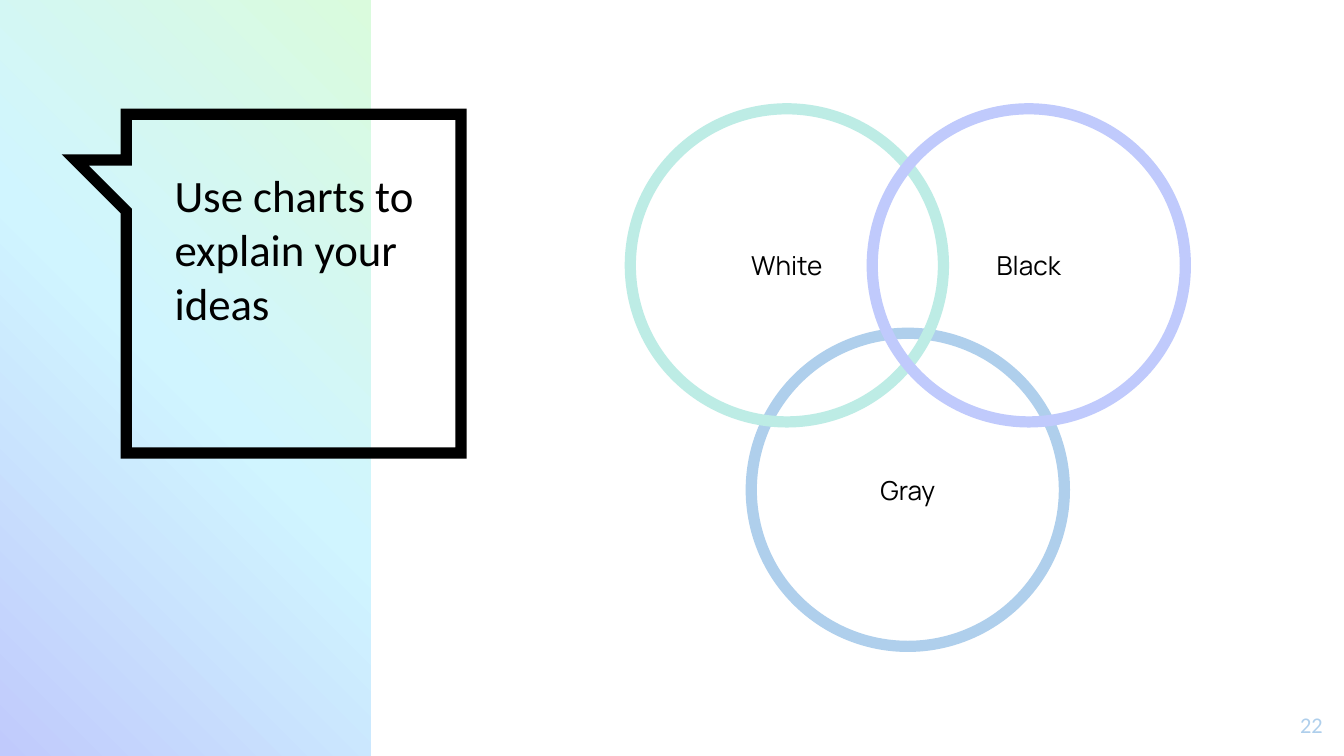
"""Build a slide with a speech-bubble title and three overlapping circles."""
import copy

import pptx
import pptx.dml.color
import pptx.enum.shapes
import pptx.enum.text
import pptx.oxml
import pptx.oxml.ns
import pptx.util

Inches = pptx.util.Inches
Pt = pptx.util.Pt
RGBColor = pptx.dml.color.RGBColor
Shapes = pptx.enum.shapes.MSO_SHAPE
Align = pptx.enum.text.PP_ALIGN
Anchor = pptx.enum.text.MSO_ANCHOR

BLACK = RGBColor(0x00, 0x00, 0x00)
WHITE = RGBColor(0xFF, 0xFF, 0xFF)
LAVENDER = RGBColor(0xC0, 0xCA, 0xFC)
SKY = RGBColor(0xD0, 0xF5, 0xFF)
LIME = RGBColor(0xDA, 0xFB, 0xDD)
BLUE = RGBColor(0xAF, 0xCF, 0xEC)
MINT = RGBColor(0xBD, 0xEC, 0xE5)

WIDTH = 10
HEIGHT = WIDTH * 9 / 16
PANEL_WIDTH = 2.76
PANEL_STOPS = [(0, LAVENDER), (0.5, SKY), (1, LIME)]
BUBBLE = [(0.94, 0.85), (3.43, 0.85), (3.43, 3.37), (0.94, 3.37),
          (0.94, 1.57), (0.56, 1.19), (0.94, 1.19)]
TITLE = "Use charts to explain your ideas"
PAGE_NUMBER = "22"
DIAMETER = 2.33
VENN_LEFT, VENN_TOP = 4.69, 0.81
STEP_X, STEP_Y = 1.8, 1.67
CIRCLES = [("Gray", BLUE, 0.5, 1), ("White", MINT, 0, 0), ("Black", LAVENDER, 1, 0)]
LINE_WIDTH = 6


def write(shape, text, font, size, color, align, anchor):
    frame = shape.text_frame
    frame.word_wrap = True
    frame.vertical_anchor = anchor
    frame.margin_left = frame.margin_right = Inches(0.1)
    frame.margin_top = frame.margin_bottom = Inches(0.1)
    paragraph = frame.paragraphs[0]
    paragraph.text = text
    paragraph.alignment = align
    paragraph.font.name = font
    paragraph.font.size = Pt(size)
    paragraph.font.color.rgb = color


def outline(shape, color):
    shape.shadow.inherit = False
    shape.fill.background()
    shape.line.color.rgb = color
    shape.line.width = Pt(LINE_WIDTH)


def add_panel(page):
    panel = page.shapes.add_shape(Shapes.RECTANGLE, 0, 0, Inches(PANEL_WIDTH), Inches(HEIGHT))
    panel.shadow.inherit = False
    panel.line.fill.background()
    panel.fill.gradient()
    panel.fill.gradient_angle = 45
    stop_list = panel.element.spPr.find(".//" + pptx.oxml.ns.qn("a:gsLst"))
    stop_list.append(copy.deepcopy(stop_list[0]))
    for stop, (position, color) in zip(panel.fill.gradient_stops, PANEL_STOPS):
        stop.position = position
        stop.color.rgb = color


def add_bubble(page):
    points = [(Inches(x), Inches(y)) for x, y in BUBBLE]
    builder = page.shapes.build_freeform(*points[0])
    builder.add_line_segments(points[1:], close=True)
    bubble = builder.convert_to_shape()
    outline(bubble, BLACK)
    miter = pptx.oxml.parse_xml(f'<a:miter {pptx.oxml.ns.nsdecls("a")} lim="800000"/>')
    bubble.element.spPr.find(pptx.oxml.ns.qn("a:ln")).append(miter)


def add_text(page, place, *style):
    box = page.shapes.add_textbox(*map(Inches, place))
    write(box, *style, Anchor.TOP)


def add_circle(page, label, color, column, row):
    left, top = VENN_LEFT + column * STEP_X, VENN_TOP + row * STEP_Y
    circle = page.shapes.add_shape(
        Shapes.OVAL, Inches(left), Inches(top), Inches(DIAMETER), Inches(DIAMETER))
    outline(circle, color)
    write(circle, label, "Manrope", 14, BLACK, Align.CENTER, Anchor.MIDDLE)


def main():
    deck = pptx.Presentation()
    deck.slide_width, deck.slide_height = Inches(WIDTH), Inches(HEIGHT)
    page = deck.slides.add_slide(deck.slide_layouts[6])
    page.background.fill.solid()
    page.background.fill.fore_color.rgb = WHITE
    add_panel(page)
    add_bubble(page)
    add_text(page, (1.2, 1.15, 2.01, 2.09), TITLE, "Calibri", 24, BLACK, Align.LEFT)
    for circle in CIRCLES:
        add_circle(page, *circle)
    add_text(page, (9.34, 5.19, 0.6, 0.43), PAGE_NUMBER, "Calibri", 12, BLUE, Align.RIGHT)
    deck.save("out.pptx")


if __name__ == "__main__":
    main()
